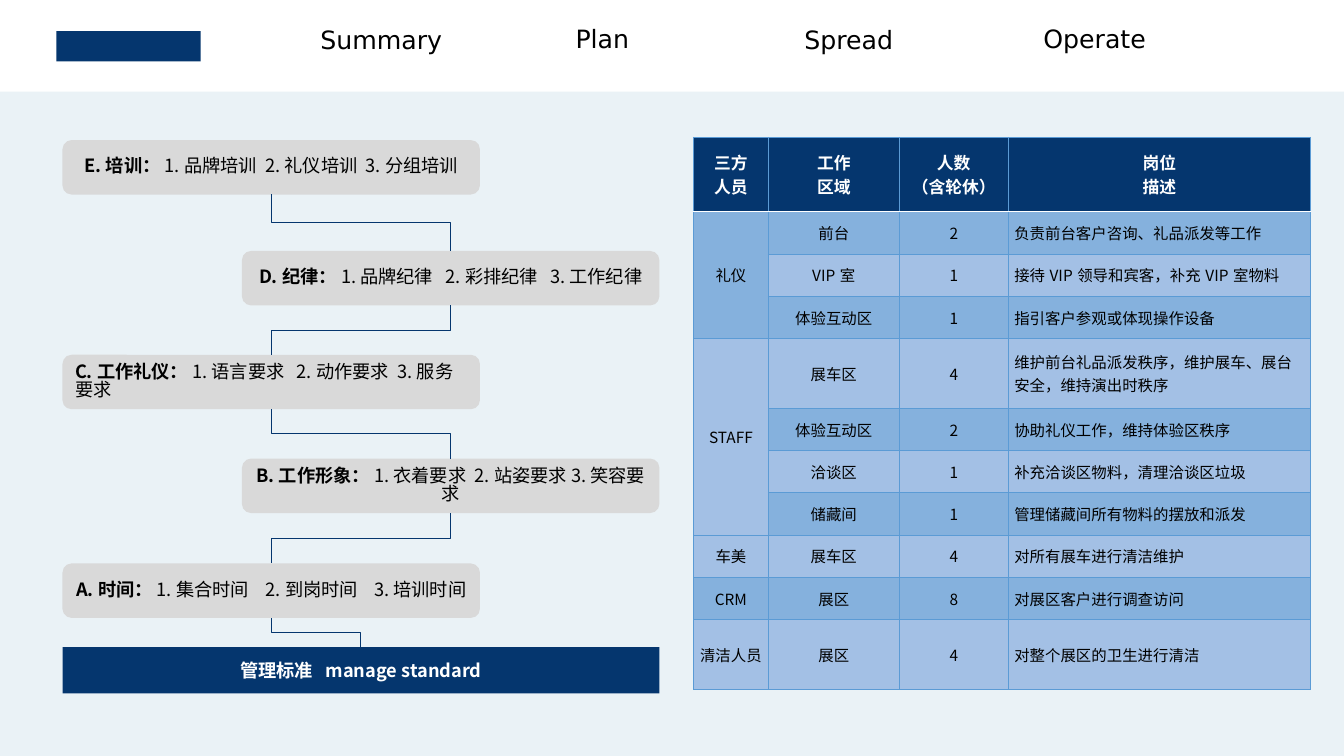
from dataclasses import dataclass
from itertools import zip_longest

from lxml.etree import SubElement
from pptx import Presentation
from pptx.dml.color import RGBColor
from pptx.enum.shapes import MSO_CONNECTOR as Link, MSO_SHAPE as Preset
from pptx.enum.text import MSO_ANCHOR as Anchor, PP_ALIGN as Align
from pptx.oxml import parse_xml
from pptx.oxml.ns import nsdecls, qn
from pptx.util import Inches, Pt

COLORS = {
    "navy": "05366E", "panel": "EAF2F6", "card": "D9D9D9", "white": "FFFFFF",
    "black": "000000", "rule": "5B9BD5", "band": "85B1DD", "plain": "A3C0E5",
}
CJK_FONT = "Noto Sans CJK SC"
NAV_FONT = "DejaVu Sans"
CARD_WIDTH, CARD_HEIGHT = 4.14, 0.54
LEFT_X, RIGHT_X = 0.62, 2.4
BASE_TOP, BASE_WIDTH = 6.42, 5.92
SPACE_WIDTH = 2.9


@dataclass
class NavLabel:
    text: str
    left: float
    top: float
    width: float


@dataclass
class Standard:
    title: str
    topics: list[str]
    gaps: list[int]
    left: float
    top: float
    align: Align = Align.CENTER

    @property
    def middle(self) -> float:
        return self.left + CARD_WIDTH / 2


@dataclass
class Post:
    area: str
    count: int
    duty: str
    height: float = 0.42


NAV = [
    NavLabel("Summary", 3.08, 0.19, 1.66),
    NavLabel("Plan", 5.61, 0.18, 1.43),
    NavLabel("Spread", 7.88, 0.19, 1.33),
    NavLabel("Operate", 10.25, 0.18, 1.68),
]
STANDARDS = [
    Standard("E.培训：", ["1.品牌培训", "2.礼仪培训", "3.分组培训"], [1, 1], LEFT_X, 1.39),
    Standard("D.纪律：", ["1.品牌纪律", "2.彩排纪律", "3.工作纪律"], [2, 2], RIGHT_X, 2.49),
    Standard("C.工作礼仪：", ["1.语言要求", "2.动作要求", "3.服务要求"], [2, 1],
             LEFT_X, 3.52, Align.LEFT),
    Standard("B.工作形象：", ["1.衣着要求", "2.站姿要求", "3.笑容要求"], [1, 0], RIGHT_X, 4.55),
    Standard("A.时间：", ["1.集合时间", "2.到岗时间", "3.培训时间"], [3, 3], LEFT_X, 5.59),
]
HEADINGS = ["三方\n人员", "工作\n区域", "人数\n（含轮休）", "岗位\n描述"]
COLUMN_WIDTHS = [0.74, 1.3, 1.08, 3]
HEADER_HEIGHT = 0.74
CREWS = {
    "礼仪": [
        Post("前台", 2, "负责前台客户咨询、礼品派发等工作"),
        Post("VIP室", 1, "接待VIP领导和宾客，补充VIP室物料"),
        Post("体验互动区", 1, "指引客户参观或体现操作设备"),
    ],
    "STAFF": [
        Post("展车区", 4, "维护前台礼品派发秩序，维护展车、展台安全，维持演出时秩序", 0.69),
        Post("体验互动区", 2, "协助礼仪工作，维持体验区秩序"),
        Post("洽谈区", 1, "补充洽谈区物料，清理洽谈区垃圾"),
        Post("储藏间", 1, "管理储藏间所有物料的摆放和派发"),
    ],
    "车美": [Post("展车区", 4, "对所有展车进行清洁维护")],
    "CRM": [Post("展区", 8, "对展区客户进行调查访问")],
    "清洁人员": [Post("展区", 4, "对整个展区的卫生进行清洁", 0.69)],
}


def rgb(name: str) -> RGBColor:
    return RGBColor.from_string(COLORS[name])


def style_run(run, size: float, color: str, bold: bool = False, face: str = CJK_FONT) -> None:
    run.font.size = Pt(size)
    run.font.bold = bold
    run.font.name = face
    run.font.color.rgb = rgb(color)
    SubElement(run.font._element, qn("a:ea")).set("typeface", face)


def add_block(slide, preset, left: float, top: float, width: float, height: float, color: str):
    block = slide.shapes.add_shape(preset, Inches(left), Inches(top), Inches(width), Inches(height))
    block.shadow.inherit = False
    block.fill.solid()
    block.fill.fore_color.rgb = rgb(color)
    block.line.fill.background()
    frame = block.text_frame
    frame.word_wrap = True
    frame.vertical_anchor = Anchor.MIDDLE
    return frame


def add_spaced_runs(paragraph, pieces: list[tuple[str, int, bool]], color: str) -> None:
    for text, gap, bold in pieces:
        words = paragraph.add_run()
        words.text = text
        style_run(words, 13, color, bold)
        if gap:
            space = paragraph.add_run()
            space.text = " "
            style_run(space, 13, color, bold)
            space.font._element.set("spc", str(round((gap - 1) * SPACE_WIDTH * 100)))


def add_nav_label(slide, label: NavLabel) -> None:
    box = slide.shapes.add_textbox(
        Inches(label.left), Inches(label.top), Inches(label.width), Inches(0.4))
    box.text_frame.word_wrap = True
    box.text_frame.text = label.text
    style_run(box.text_frame.paragraphs[0].runs[0], 18, "black", face=NAV_FONT)


def add_standard(slide, standard: Standard) -> None:
    frame = add_block(slide, Preset.ROUNDED_RECTANGLE, standard.left, standard.top,
                      CARD_WIDTH, CARD_HEIGHT, "card")
    paragraph = frame.paragraphs[0]
    paragraph.alignment = standard.align
    paragraph.line_spacing = 0.85
    topics = zip_longest(standard.topics, standard.gaps, fillvalue=0)
    add_spaced_runs(paragraph, [(standard.title, 0, True)]
                    + [(topic, gap, False) for topic, gap in topics], "black")


def add_step_link(slide, upper_x: float, upper_y: float, lower_x: float, lower_y: float) -> None:
    center_x, center_y = (upper_x + lower_x) / 2, (upper_y + lower_y) / 2
    half_length, half_shift = (lower_y - upper_y) / 2, abs(lower_x - upper_x) / 2
    downward = upper_x > lower_x
    rise = half_shift if downward else -half_shift
    link = slide.shapes.add_connector(
        Link.ELBOW, Inches(center_x - half_length), Inches(center_y - rise),
        Inches(center_x + half_length), Inches(center_y + rise))
    link.line.color.rgb = rgb("navy")
    link.line.width = Pt(0.75)
    properties = link._element.spPr
    properties.find(qn("a:xfrm")).set("rot", str((90 if downward else 270) * 60000))
    SubElement(properties, qn("a:effectLst"))


def border(side: str, color: str, points: float):
    return parse_xml(
        f'<a:{side} {nsdecls("a")} w="{Pt(points)}"><a:solidFill>'
        f'<a:srgbClr val="{COLORS[color]}"/></a:solidFill></a:{side}>')


def style_cell(cell, row: int, column: int) -> None:
    header = row == 0
    cell.vertical_anchor = Anchor.MIDDLE
    cell.margin_left = cell.margin_right = Inches(0.06)
    cell.margin_top = cell.margin_bottom = Inches(0.05)
    cell.fill.solid()
    cell.fill.fore_color.rgb = rgb("navy" if header else "band" if row % 2 else "plain")
    white_side = {0: "lnB", 1: "lnT"}.get(row)
    for index, side in enumerate(("lnL", "lnR", "lnT", "lnB")):
        color, points = ("white", 1) if side == white_side else ("rule", 0.5)
        cell._tc.tcPr.insert(index, border(side, color, points))
    for paragraph in cell.text_frame.paragraphs:
        paragraph.alignment = Align.LEFT if column == 3 and not header else Align.CENTER
        for run in paragraph.runs:
            style_run(run, 12 if header else 11, "white" if header else "black", header)


def add_staff_table(slide) -> None:
    posts = [post for crew in CREWS.values() for post in crew]
    heights = [HEADER_HEIGHT] + [post.height for post in posts]
    table = slide.shapes.add_table(
        len(heights), len(COLUMN_WIDTHS), Inches(6.88), Inches(1.36),
        Inches(sum(COLUMN_WIDTHS)), Inches(sum(heights))).table
    table.first_row = table.horz_banding = False
    for column, width in zip(table.columns, COLUMN_WIDTHS):
        column.width = Inches(width)
    for row, height in zip(table.rows, heights):
        row.height = Inches(height)
    entries = [HEADINGS] + [["", post.area, str(post.count), post.duty] for post in posts]
    first = 1
    for crew, members in CREWS.items():
        entries[first][0] = crew
        if len(members) > 1:
            table.cell(first, 0).merge(table.cell(first + len(members) - 1, 0))
        first += len(members)
    for row, values in enumerate(entries):
        for column, value in enumerate(values):
            cell = table.cell(row, column)
            cell.text_frame.text = value
            style_cell(cell, row, column)


def main() -> None:
    deck = Presentation()
    deck.slide_width, deck.slide_height = Inches(13.33), Inches(7.5)
    slide = deck.slides.add_slide(deck.slide_layouts[6])
    add_block(slide, Preset.RECTANGLE, 0, 0.91, 13.33, 6.59, "panel")
    add_block(slide, Preset.RECTANGLE, 0.56, 0.31, 1.43, 0.3, "navy")
    for label in NAV:
        add_nav_label(slide, label)
    add_staff_table(slide)

    base = add_block(slide, Preset.RECTANGLE, LEFT_X, BASE_TOP, BASE_WIDTH, 0.46, "navy")
    base.paragraphs[0].alignment = Align.CENTER
    add_spaced_runs(base.paragraphs[0],
                    [("管理标准", 2, True), ("manage standard", 0, True)], "white")
    for standard in STANDARDS:
        add_standard(slide, standard)
    landings = [(standard.middle, standard.top) for standard in STANDARDS[1:]]
    landings.append((LEFT_X + BASE_WIDTH / 2, BASE_TOP))
    for standard, (landing_x, landing_y) in zip(STANDARDS, landings):
        add_step_link(slide, standard.middle, standard.top + CARD_HEIGHT, landing_x, landing_y)
    deck.save("out.pptx")


if __name__ == "__main__":
    main()
